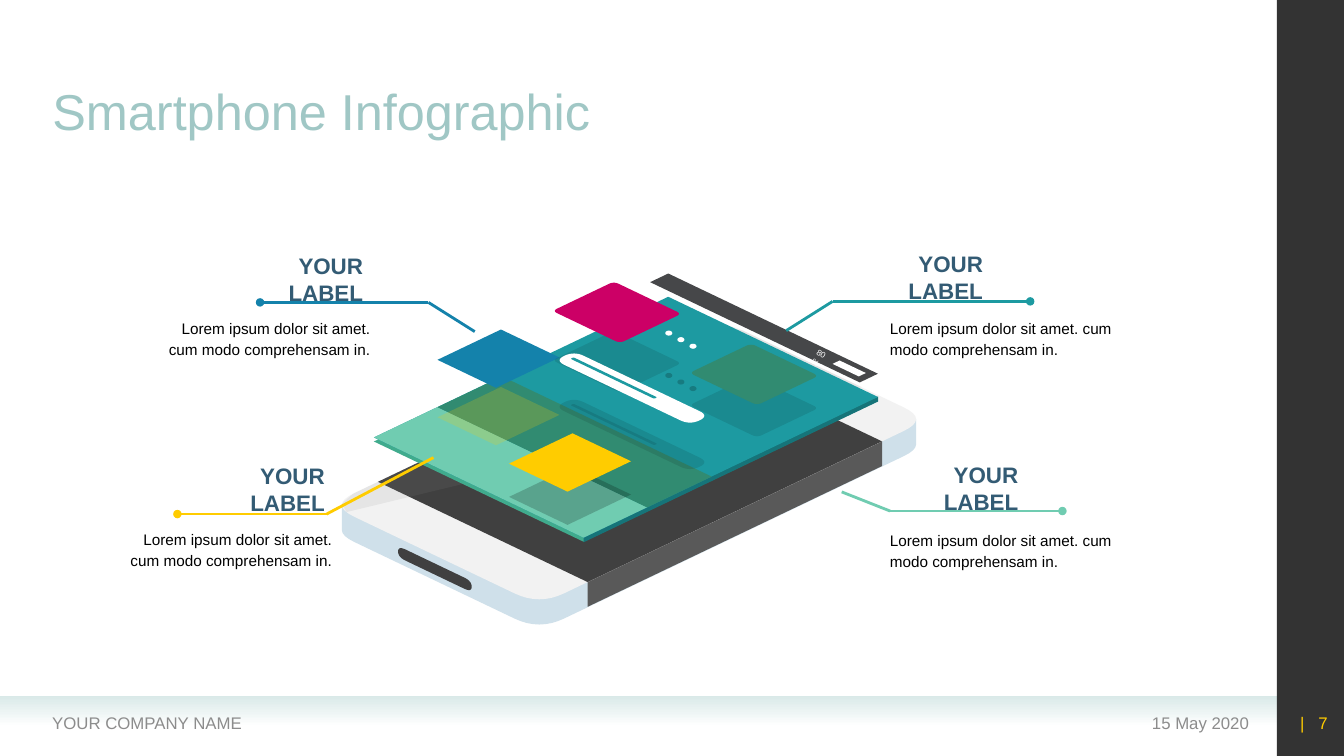
from math import dist

from lxml.etree import SubElement
from pptx import Presentation
from pptx.dml.color import RGBColor
from pptx.enum.shapes import MSO_CONNECTOR, MSO_SHAPE
from pptx.enum.text import MSO_ANCHOR, MSO_AUTO_SIZE, PP_ALIGN
from pptx.oxml.ns import qn
from pptx.util import Inches, Pt

CELL = Inches(0.1)
COLUMNS, ROWS = 133.33, 75
SLOPE = 0.478
CURVE_STEPS = 8
SCREEN_DEPTH, SCREEN_LENGTH = 20.8, 29.2
NOTE = "Lorem ipsum dolor sit amet. cum modo comprehensam in."
LEFT, RIGHT = PP_ALIGN.LEFT, PP_ALIGN.RIGHT


def grid(*cells):
    """Turn numbers of grid cells into lengths."""
    return [round(cell * CELL) for cell in cells]


def colour(value):
    """Turn a hex string into a colour."""
    return RGBColor.from_string(value)


def paint(shape, fill, opacity=100):
    """Give a shape a plain fill without line or shadow."""
    shape.shadow.inherit = False
    shape.fill.solid()
    shape.fill.fore_color.rgb = colour(fill)
    shape.line.fill.background()
    if opacity < 100:
        tone = shape._element.spPr.find(".//" + qn("a:srgbClr"))
        SubElement(tone, qn("a:alpha"), val=str(opacity * 1000))


def rounded(corners, cut):
    """Return the outline of a polygon with its corners rounded."""
    points = []
    for index, corner in enumerate(corners):
        ends = []
        for other in (corners[index - 1], corners[(index + 1) % len(corners)]):
            share = min(cut / dist(corner, other), 0.5)
            ends.append([c + (o - c) * share for c, o in zip(corner, other)])
        for step in range(CURVE_STEPS + 1):
            t = step / CURVE_STEPS
            points.append(tuple((1 - t) ** 2 * a + 2 * t * (1 - t) * c + t ** 2 * b
                                for a, c, b in zip(ends[0], corner, ends[1])))
    return points


def tile(left, top, depth, length, cut=0):
    """Return a flat isometric tile that starts at its left corner."""
    corners = [(left, top), (left + depth, top + SLOPE * depth),
               (left + depth + length, top + SLOPE * (depth - length)),
               (left + length, top - SLOPE * length)]
    return rounded(corners, cut) if cut else corners


def wall(left, top, width, height, slope, cut=0):
    """Return an upright isometric face that starts at its top left corner."""
    end = top + slope * width
    corners = [(left, top), (left, top + height), (left + width, end + height), (left + width, end)]
    return rounded(corners, cut) if cut else corners


def draw(shapes, points, fill, opacity=100):
    """Draw a closed outline."""
    start, *others = [grid(*point) for point in points]
    builder = shapes.build_freeform(*start, scale=1.0)
    builder.add_line_segments(others, close=True)
    paint(builder.convert_to_shape(), fill, opacity)


def add_text(shapes, place, text, size, tone, align=LEFT, anchor=MSO_ANCHOR.MIDDLE, grow=True):
    """Add a wrapped text box and return it."""
    box = shapes.add_textbox(*grid(*place))
    frame = box.text_frame
    frame.word_wrap = True
    frame.vertical_anchor = anchor
    frame.auto_size = MSO_AUTO_SIZE.SHAPE_TO_FIT_TEXT if grow else MSO_AUTO_SIZE.NONE
    frame.text = text
    format_para(frame.paragraphs[0], size, tone, align)
    return box


def format_para(para, size, tone, align):
    """Set the font and alignment of a paragraph."""
    para.alignment = align
    para.font.name = "Arial"
    para.font.size = Pt(size)
    para.font.color.rgb = colour(tone)


def add_frame(page):
    """Add the title, the footer band and the sidebar."""
    band = page.shapes.add_shape(MSO_SHAPE.RECTANGLE, *grid(0, 69, 126.67, 3.1))
    paint(band, "FFFFFF")
    band.fill.gradient()
    band.fill.gradient_angle = 270
    for stop, tone in zip(band.fill.gradient_stops, ("D9E9E8", "FFFFFF")):
        stop.color.rgb = colour(tone)
    sidebar = page.shapes.add_shape(MSO_SHAPE.RECTANGLE, *grid(126.67, 0, 6.66, ROWS))
    paint(sidebar, "000000", 80)
    add_text(page.shapes, (91, 69.7, 33.9, 4), "15 May 2020", 12, "8C8C8C", RIGHT, grow=False)
    add_text(page.shapes, (4.2, 69.7, 49, 4), "YOUR COMPANY NAME", 12, "8C8C8C", grow=False)
    number = add_text(page.shapes, (126, 69.7, 6.7, 4), "| ", 12, "FFCC00", RIGHT, grow=False)
    para = number.text_frame.paragraphs[0]
    para.runs[0]._r.get_or_add_rPr().set("spc", "330")
    para.add_run().text = "7"

    title = page.shapes.title
    title.left, title.top, title.width, title.height = grid(4.2, 2, 112.1, 12.5)
    title.text_frame.text = "Smartphone Infographic"
    title.text_frame.vertical_anchor = MSO_ANCHOR.BOTTOM
    para = title.text_frame.paragraphs[0]
    para.line_spacing = 0.9
    format_para(para, 36, "A0C7C5", LEFT)


def add_phone(shapes):
    """Draw the body of the phone with its dark screen and glare."""
    rim = tile(32.7, 50.1, SCREEN_DEPTH, 38.6, cut=2.7)
    left_end = CURVE_STEPS // 2
    right_end = left_end + 2 * (CURVE_STEPS + 1)
    lower_rim = [(x, y + 2.5) for x, y in rim[left_end:right_end + 1]]
    draw(shapes, lower_rim + [rim[right_end], rim[left_end]], "CFE0EA")
    draw(shapes, wall(58.3, 57.7, SCREEN_LENGTH, 2.5, -SLOPE), "595959")
    draw(shapes, rim, "F2F2F2")
    draw(shapes, tile(37.5, 47.8, SCREEN_DEPTH, SCREEN_LENGTH), "404040")
    draw(shapes, wall(39.5, 54.17, 7.3, 1.1, SLOPE, cut=0.8), "404040")
    glare = [(40.6, 49.3), (37.5, 47.8), (66.8, 33.8), (79.5, 39.9)]
    edge = [(85.5, 38.4), (73.7, 32.8), (71.3, 32.3), (68.9, 32.8), (35, 49), (33.9, 50), (34.4, 50.8)]
    draw(shapes, glare + edge, "000000", 5)
    draw(shapes, glare, "FFFFFF", 5)


def add_dots(shapes, top, fill, opacity=100):
    """Draw a falling row of three dots."""
    for index in range(3):
        place = grid(66 + 1.2 * index, top + 0.65 * index, 0.7, 0.5)
        paint(shapes.add_shape(MSO_SHAPE.OVAL, *place), fill, opacity)


def add_screen(shapes):
    """Draw the floating screen with its tiles, buttons and status bar."""
    draw(shapes, tile(37.1, 43.8, SCREEN_DEPTH, SCREEN_LENGTH), "40AB8D")
    draw(shapes, wall(57.9, 53.3, SCREEN_LENGTH, 0.5, -SLOPE), "167479")
    draw(shapes, tile(37.1, 43.4, SCREEN_DEPTH, SCREEN_LENGTH), "1D9AA1")
    draw(shapes, tile(37.1, 43.4, SCREEN_DEPTH, 6.3), "70CCB1")
    draw(shapes, tile(43.4, 40.4, SCREEN_DEPTH, 6.4), "318B71")
    for left, top, fill, opacity in ((50.5, 49.3, "000000", 20), (50.5, 46, "FFCC00", 100),
                                     (43.4, 41.4, "FFCC00", 20), (43.4, 35.7, "1482AB", 100)):
        draw(shapes, tile(left, top, 5.8, 6.3), fill, opacity)
    add_dots(shapes, 32.8, "FFFFFF")

    draw(shapes, tile(64.5, 28, SCREEN_DEPTH, 1.8), "464749")
    draw(shapes, tile(82.6, 36.1, 2.6, 0.7), "FFFFFF")
    charge = add_text(shapes, (80, 34.3, 3.5, 2), "80%", 5.9, "FFFFFF", anchor=MSO_ANCHOR.TOP)
    charge.rotation = 30.2

    for left, top, fill, opacity in ((54.8, 35.75, "000000", 10), (54.8, 30.85, "CC0066", 100),
                                     (68.4, 40.2, "000000", 10), (68.4, 37, "318B71", 100)):
        draw(shapes, tile(left, top, 6.7, 6.1, cut=0.55), fill, opacity)
    add_dots(shapes, 37, "000000", 20)
    for drop, pill, stripe, opacity in ((0, "FFFFFF", "1D9AA1", 100), (4.6, "000000", "000000", 10)):
        draw(shapes, tile(55.05, 35.75 + drop, 13.4, 1.9, cut=1.05), pill, opacity)
        draw(shapes, tile(56.6, 35.6 + drop, 8.3, 0.3, cut=0.15), stripe, opacity)


def add_line(shapes, start, end, tone, dot=False):
    """Add a straight line, with a dot at its end if asked."""
    line = shapes.add_connector(MSO_CONNECTOR.STRAIGHT, *grid(*start, *end))
    line.line.color.rgb = colour(tone)
    line.line.width = Pt(2)
    if dot:
        SubElement(line.line._get_or_add_ln(), qn("a:tailEnd"), type="oval")
    SubElement(line._element.spPr, qn("a:effectLst"))


def add_callout(shapes, tone, points, label_at, note_at, align):
    """Add a bent leader line with its label and note."""
    start, bend, end = points
    add_line(shapes, start, bend, tone)
    add_line(shapes, bend, end, tone, dot=True)
    label = add_text(shapes, (*label_at, 14.7, 3.7), "YOUR LABEL", 16, "335B74", RIGHT)
    label.text_frame.paragraphs[0].font.bold = True
    width = 23.9 if align == RIGHT else 25.6
    note = add_text(shapes, (*note_at, width, 5), NOTE, 10.9, "000000", align, MSO_ANCHOR.TOP)
    para = note.text_frame.paragraphs[0]
    para.line_spacing = Pt(15.1)
    para.space_before = Pt(2.2)


def main():
    """Build and save the slide."""
    deck = Presentation()
    deck.slide_width, deck.slide_height = grid(COLUMNS, ROWS)
    page = deck.slides.add_slide(deck.slide_layouts[5])
    add_frame(page)
    phone = page.shapes.add_group_shape()
    add_phone(phone.shapes)
    add_screen(phone.shapes)
    callouts = (
        ("1482AB", ((47.1, 32.9), (42.5, 30), (25.8, 30)), (22.3, 25.8), (13.8, 30.9), RIGHT),
        ("FFCC00", ((43, 45.4), (32.4, 51), (17.6, 51)), (18.5, 46.7), (10, 51.8), RIGHT),
        ("1D9AA1", ((78, 32.8), (82.6, 29.9), (102.2, 29.9)), (83.8, 25.6), (87.3, 30.9), LEFT),
        ("70CCB1", ((83.5, 48.8), (88.3, 50.7), (105.4, 50.7)), (87.3, 46.6), (87.3, 51.9), LEFT),
    )
    for callout in callouts:
        add_callout(page.shapes, *callout)
    deck.save("out.pptx")


if __name__ == "__main__":
    main()
